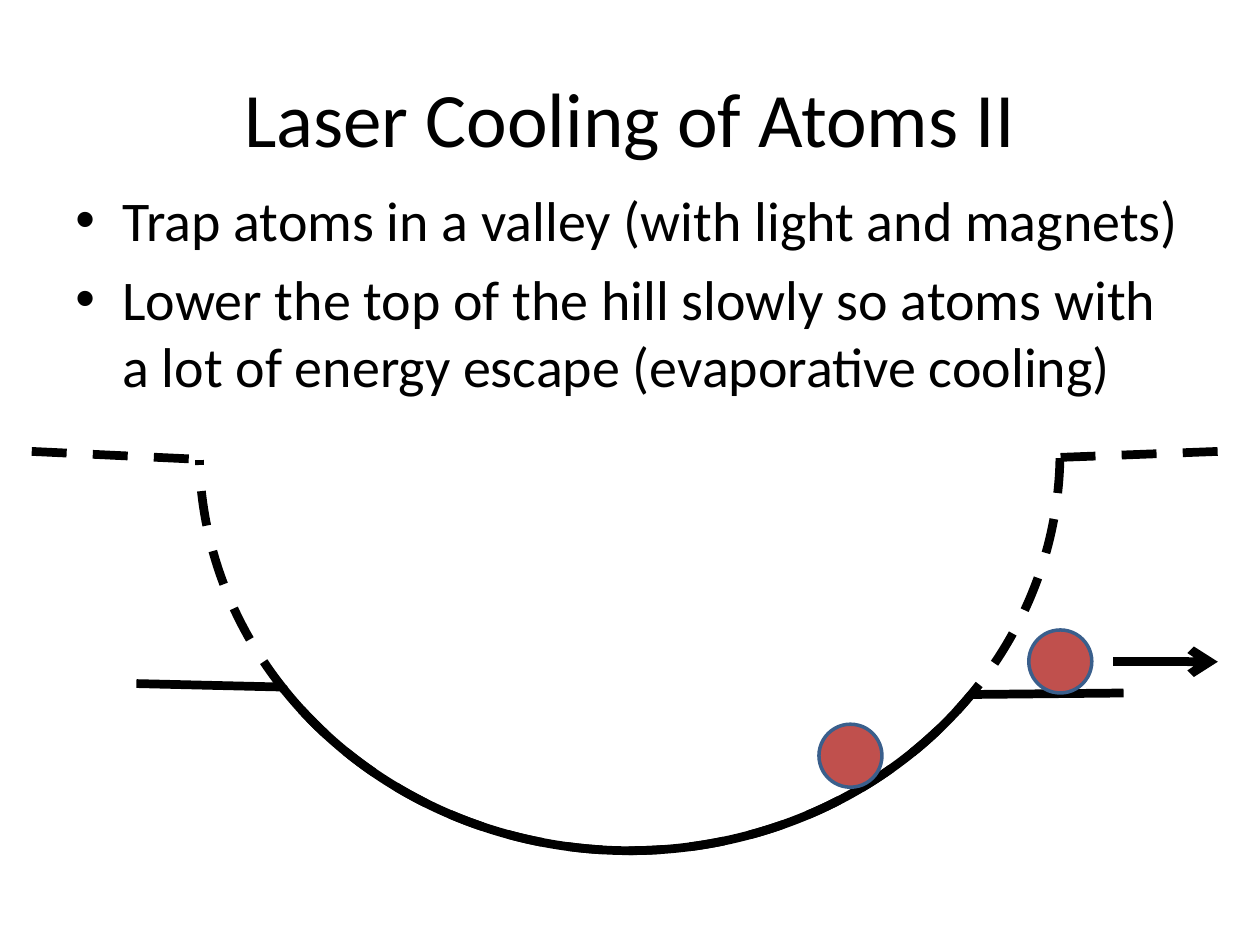
from lxml import etree
from pptx import Presentation
from pptx.dml.color import RGBColor
from pptx.enum.dml import MSO_LINE
from pptx.enum.shapes import MSO_CONNECTOR, MSO_SHAPE
from pptx.enum.text import MSO_ANCHOR, PP_ALIGN
from pptx.oxml.ns import qn
from pptx.util import Cm, Pt

BLACK = RGBColor(0x00, 0x00, 0x00)
RED = RGBColor(0xC0, 0x50, 0x4D)
BLUE = RGBColor(0x3A, 0x5F, 0x8C)
ARC, OVAL = MSO_SHAPE.ARC, MSO_SHAPE.OVAL
STRAIGHT = MSO_CONNECTOR.STRAIGHT
DASH = MSO_LINE.DASH
LEFT, CENTER = PP_ALIGN.LEFT, PP_ALIGN.CENTER
TOP, MIDDLE = MSO_ANCHOR.TOP, MSO_ANCHOR.MIDDLE

prs = Presentation()
prs.slide_width, prs.slide_height = Cm(25.4), Cm(19.05)
s = prs.slides.add_slide(prs.slide_layouts[6])


def add_text(lines, top, height, size, align=LEFT, anchor=TOP, bullet=False):
    tf = s.shapes.add_textbox(Cm(1.27), Cm(top), Cm(22.86), Cm(height)).text_frame
    tf.word_wrap = True
    tf.vertical_anchor = anchor
    for i, line in enumerate(lines):
        p = tf.paragraphs[0] if i == 0 else tf.add_paragraph()
        p.alignment = align
        r = p.add_run()
        r.text = line
        r.font.name, r.font.size = "Calibri", Pt(size)
        r.font.color.rgb = BLACK
        if bullet:
            p.space_before = Pt(7)
            pPr = p._p.get_or_add_pPr()
            pPr.set("marL", str(Cm(0.95)))
            pPr.set("indent", str(-Cm(0.95)))
            etree.SubElement(pPr, qn("a:buFont")).set("typeface", "Arial")
            etree.SubElement(pPr, qn("a:buChar")).set("char", "•")


def set_line(line, color=BLACK, width=5, dash=None):
    line.color.rgb = color
    line.width = Pt(width)
    if dash is not None:
        line.dash_style = dash


# Title and bullets
add_text(["Laser Cooling of Atoms II"], 0.76, 3.18, 44, align=CENTER, anchor=MIDDLE)
add_text(["Trap atoms in a valley (with light and magnets)",
          "Lower the top of the hill slowly so atoms with a lot of energy escape "
          "(evaporative cooling)"], 3.61, 12.57, 32, bullet=True)

# Valley: dashed full depth, solid lowered rim
for start, end, dash in [(0.51, 107.34, DASH), (21.26, 87.49, None)]:
    arc = s.shapes.add_shape(ARC, Cm(4.02), Cm(1.07), Cm(17.35), Cm(16.08))
    arc.shadow.inherit = False
    arc.adjustments[0], arc.adjustments[1] = start, end
    arc.fill.background()
    set_line(arc.line, dash=dash)

# Hilltops, old (dashed) and lowered (solid), and the escape direction
rims = [
    (21.38, 9.22, 24.55, 9.1, DASH),
    (0.64, 9.1, 4.02, 9.26, DASH),
    (19.58, 14.0, 22.65, 13.97, None),
    (2.75, 13.78, 5.7, 13.85, None),
    (22.44, 13.34, 24.55, 13.34, None),
]
for x1, y1, x2, y2, dash in rims:
    cxn = s.shapes.add_connector(STRAIGHT, Cm(x1), Cm(y1), Cm(x2), Cm(y2))
    set_line(cxn.line, dash=dash)
    etree.SubElement(cxn._element.spPr, qn("a:effectLst"))
# The last line is the escape arrow
etree.SubElement(cxn.line._get_or_add_ln(), qn("a:tailEnd")).set("type", "arrow")

# Atoms: one trapped, one escaping
for x, y in [(16.51, 14.6), (20.74, 12.7)]:
    atom = s.shapes.add_shape(OVAL, Cm(x), Cm(y), Cm(1.27), Cm(1.27))
    atom.shadow.inherit = False
    atom.fill.solid()
    atom.fill.fore_color.rgb = RED
    set_line(atom.line, color=BLUE, width=2)

prs.save("out.pptx")
